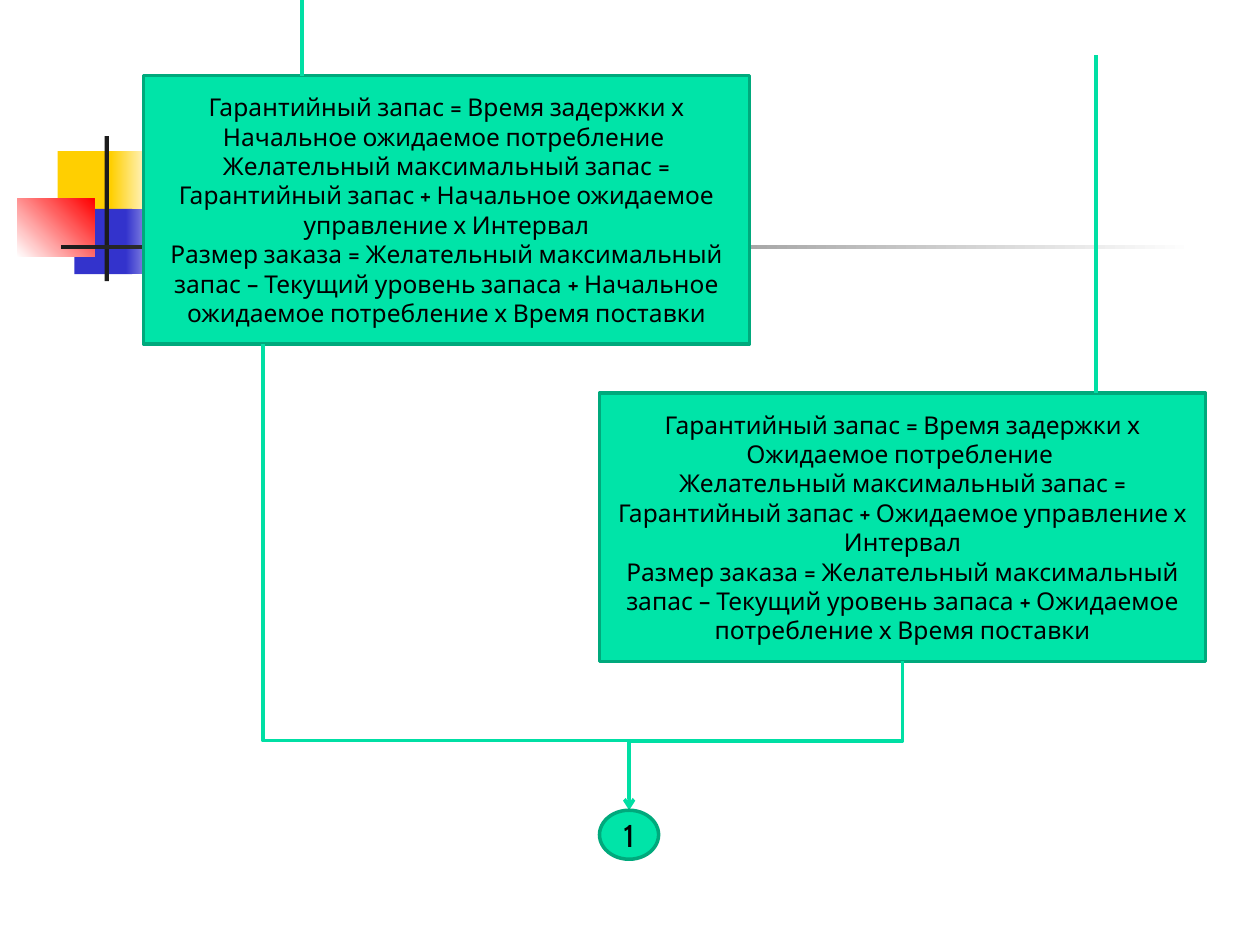
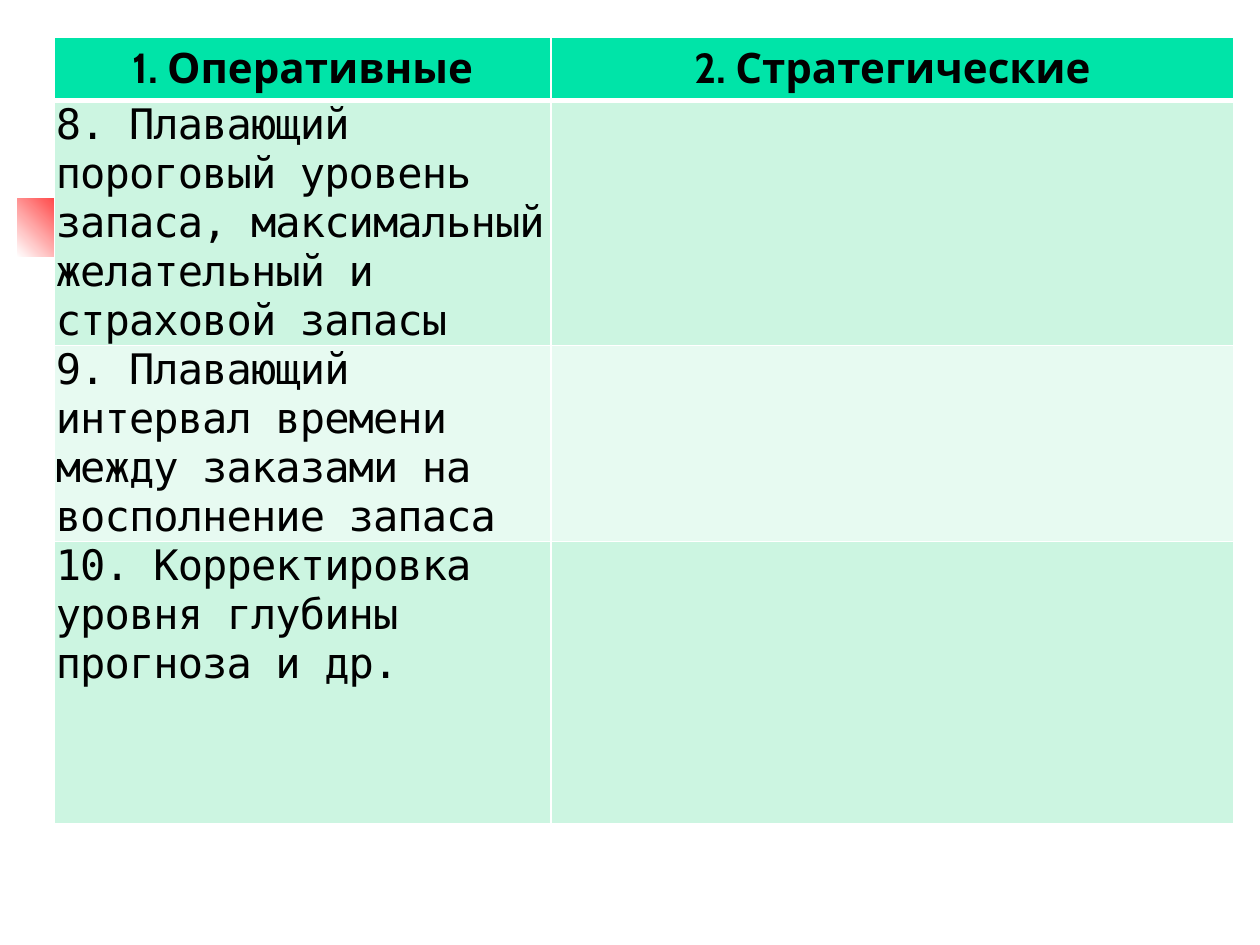
from lxml.etree import SubElement
from pptx import Presentation
from pptx.dml.color import RGBColor
from pptx.enum.shapes import MSO_CONNECTOR, MSO_SHAPE
from pptx.enum.text import MSO_ANCHOR, PP_ALIGN
from pptx.oxml.ns import qn
from pptx.util import Pt

WHITE = RGBColor(0xFF, 0xFF, 0xFF)
BLACK = RGBColor(0, 0, 0)
DARK = RGBColor(0x1C, 0x1C, 0x1C)
GOLD = RGBColor(0xFF, 0xCF, 0x01)
BLUE = RGBColor(0x33, 0x33, 0xCC)
RED = RGBColor(0xFF, 0, 0)
GREEN = RGBColor(0, 0xE4, 0xA8)
EDGE = RGBColor(0, 0xA9, 0x7C)
WIRE = RGBColor(0, 0xDF, 0xA4)
MINT = RGBColor(0xCC, 0xF5, 0xE1)
PALE = RGBColor(0xE7, 0xFA, 0xF1)

NOTE = {"name": "Cabin", "size": Pt(14)}
NODE = {"name": "Cabin", "size": Pt(18)}
HEAD = {"name": "Cabin", "size": Pt(24), "bold": True}
BODY = {"name": "DejaVu Sans Mono", "size": Pt(24), "bold": False}
TIGHT = {"margin_left": Pt(0.72), "margin_right": Pt(0.72),
         "margin_top": 0, "margin_bottom": 0}

FIRST = [
    "Гарантийный запас = Время задержки х Начальное ожидаемое потребление ",
    "Желательный максимальный запас = Гарантийный запас + Начальное ожидаемое управление х Интервал",
    "Размер заказа = Желательный максимальный запас – Текущий уровень запаса + Начальное ожидаемое потребление х Время поставки",
]
SECOND = [
    "Гарантийный запас = Время задержки х Ожидаемое потребление ",
    "Желательный максимальный запас = Гарантийный запас + Ожидаемое управление х Интервал",
    "Размер заказа = Желательный максимальный запас – Текущий уровень запаса + Ожидаемое потребление х Время поставки",
]
TITLES = ["1. Оперативные", "2. Стратегические"]
ITEMS = [
    "8. Плавающий пороговый уровень запаса, максимальный желательный и страховой запасы",
    "9. Плавающий интервал времени между заказами на восполнение запаса",
    "10. Корректировка уровня глубины прогноза и др.",
]


def apply(target, values):
    for key, value in values.items():
        setattr(target, key, value)


def write(frame, lines, look, align):
    for i, line in enumerate(lines):
        para = frame.add_paragraph() if i else frame.paragraphs[0]
        para.alignment = align
        run = para.add_run()
        run.text = line
        apply(run.font, look)
        run.font.color.rgb = BLACK


def draw(slide, kind, box):
    shape = slide.shapes.add_shape(kind, *map(Pt, box))
    shape.shadow.inherit = False
    return shape


def emblem(slide, master, left, top):
    parts = [
        (23, 8.6, 34.6, 37.4, GOLD, None, 0),
        (53.4, 8.6, 25.9, 37.4, GOLD, WHITE, 0),
        (32.5, 41.5, 33, 37.4, BLUE, None, 0),
        (62, 41.5, 28.8, 37.4, BLUE, WHITE, 0),
        (0, 35.8, 44, 33.2, WHITE, RED, 45),
        (49.8, 0, 2.4, 82.8, DARK, None, 0),
        (24.6, 62.3, 648, 2.4, DARK, WHITE, 0),
    ]
    for i, (x, y, w, h, start, end, angle) in enumerate(parts):
        shape = draw(slide, MSO_SHAPE.RECTANGLE, (left + x, top + y, w, h))
        shape.line.fill.background()
        if end is None:
            shape.fill.solid()
            shape.fill.fore_color.rgb = start
        else:
            shape.fill.gradient()
            shape.fill.gradient_angle = angle
            for stop, color in zip(shape.fill.gradient_stops, (start, end)):
                stop.color.rgb = color
        shape.element.nvSpPr.cNvPr.set("id", str(20 + i))
        master.shapes.element.append(shape.element)


def block(slide, kind, box, lines, look):
    shape = draw(slide, kind, box)
    shape.fill.solid()
    shape.fill.fore_color.rgb = GREEN
    shape.line.color.rgb = EDGE
    shape.line.width = Pt(2)
    apply(shape.text_frame, {"word_wrap": True, "vertical_anchor": MSO_ANCHOR.MIDDLE})
    write(shape.text_frame, lines, look, PP_ALIGN.CENTER)


def wire(slide, kind, start, end, arrow=False):
    link = slide.shapes.add_connector(kind, *map(Pt, start + end))
    link.line.color.rgb = WIRE
    link.line.width = Pt(2)
    props = link.element.spPr
    if arrow:
        SubElement(props.find(qn("a:ln")), qn("a:tailEnd"), type="arrow")
    SubElement(props, qn("a:effectLst"))
    return props


def bend(slide, start, end, preset, turn, flip=False, adjust=None, arrow=False):
    (x1, y1), (x2, y2) = start, end
    midx, midy = (x1 + x2) / 2, (y1 + y2) / 2
    halfw, halfh = abs(y2 - y1) / 2, abs(x2 - x1) / 2
    props = wire(slide, MSO_CONNECTOR.ELBOW, (midx - halfw, midy - halfh),
                 (midx + halfw, midy + halfh), arrow)
    frame = props.find(qn("a:xfrm"))
    frame.set("rot", str(turn * 60000))
    if flip:
        frame.set("flipH", "1")
    shape = props.find(qn("a:prstGeom"))
    shape.set("prst", preset)
    if adjust:
        SubElement(shape.find(qn("a:avLst")), qn("a:gd"),
                   name="adj1", fmla=f"val {adjust}")


def flow(slide, left, top):
    wide, high = 346.4, 153.4
    right, low = left + 260.6, top + 181.4
    node = top + 419.8
    join = top + 380.2
    size = 33.8
    center = right + size / 2
    block(slide, MSO_SHAPE.RECTANGLE, (left, top, wide, high), FIRST, NOTE)
    block(slide, MSO_SHAPE.RECTANGLE, (right, low, wide, high), SECOND, NOTE)
    for x, y, end in ((left + 544.3, top - 11.5, low), (left + 90.7, 0, top)):
        wire(slide, MSO_CONNECTOR.STRAIGHT, (x, y), (x, end))
    bend(slide, (left + 68.4, top + high), (center, node), "bentConnector3",
         270, True, 85100, True)
    bend(slide, (right + wide / 2, low + high), (center, join), "bentConnector2", 90)
    block(slide, MSO_SHAPE.OVAL, (right, node, size, 28), ["1"], NODE)


def border(cell, widths):
    props = cell._tc.get_or_add_tcPr()
    for i, (side, width) in enumerate(zip("LRTB", widths)):
        line = SubElement(props, qn(f"a:ln{side}"), w=str(Pt(width)))
        fill = SubElement(line, qn("a:solidFill"))
        SubElement(fill, qn("a:srgbClr"), val=str(WHITE))
        props.insert(i, line)


def grid(slide, left, top, cols, rows):
    box = map(Pt, (left, top, sum(cols), sum(rows)))
    table = slide.shapes.add_table(len(rows), len(cols), *box).table
    for col, width in zip(table.columns, cols):
        col.width = Pt(width)
    for row, height in zip(table.rows, rows):
        row.height = Pt(height)
    data = [TITLES] + [[item, ""] for item in ITEMS]
    for r, (texts, color) in enumerate(zip(data, (GREEN, MINT, PALE, MINT))):
        for c, text in enumerate(texts):
            cell = table.cell(r, c)
            cell.fill.solid()
            cell.fill.fore_color.rgb = color
            border(cell, (1, 1, 3 if r == 1 else 1, 3 if r == 0 else 1))
            if r == 0:
                write(cell.text_frame, [text], HEAD, PP_ALIGN.CENTER)
            elif text:
                apply(cell, TIGHT)
                write(cell.text_frame, [text], BODY, PP_ALIGN.LEFT)
                run = cell.text_frame.paragraphs[0].runs[0]
                run.font._element.set("spc", "-50")


def main():
    deck = Presentation()
    apply(deck, {"slide_width": Pt(720), "slide_height": Pt(540)})
    blank = deck.slide_layouts[6]
    chart = deck.slides.add_slide(blank)
    emblem(chart, deck.slide_master, 10, 77.8)
    flow(chart, 82, 43.2)
    grid(deck.slides.add_slide(blank), 31.2, 21, (283.6, 390.2), (35, 140, 112, 161.2))
    deck.save("out.pptx")


if __name__ == "__main__":
    main()
